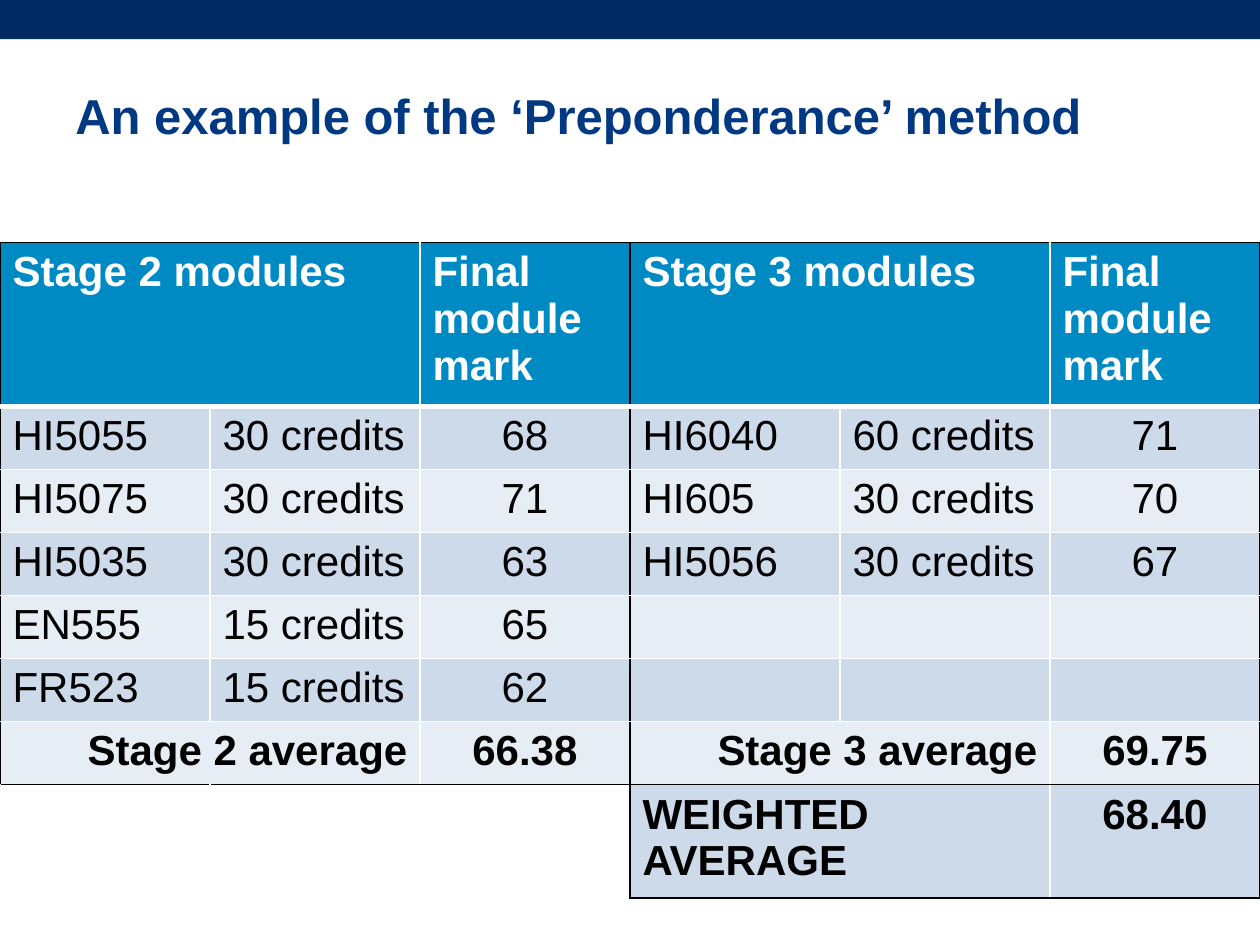
from lxml.etree import SubElement
from pptx import Presentation
from pptx.dml.color import RGBColor
from pptx.enum.shapes import MSO_SHAPE
from pptx.enum.text import MSO_ANCHOR, PP_ALIGN
from pptx.oxml.ns import qn
from pptx.util import Cm, Pt

NAVY = RGBColor(0x00, 0x2A, 0x62)
TITLE_BLUE = RGBColor(0x00, 0x38, 0x82)
HEADER_BLUE = RGBColor(0x00, 0x8A, 0xC4)
BAND_DARK = RGBColor(0xCC, 0xDA, 0xEA)
BAND_LIGHT = RGBColor(0xE7, 0xED, 0xF5)
BLACK = RGBColor(0x00, 0x00, 0x00)
WHITE = RGBColor(0xFF, 0xFF, 0xFF)

ROWS = [
    ["Stage 2 modules", "", "Final module mark", "Stage 3 modules", "", "Final module mark"],
    ["HI5055", "30 credits", "68", "HI6040", "60 credits", "71"],
    ["HI5075", "30 credits", "71", "HI605", "30 credits", "70"],
    ["HI5035", "30 credits", "63", "HI5056", "30 credits", "67"],
    ["EN555", "15 credits", "65", "", "", ""],
    ["FR523", "15 credits", "62", "", "", ""],
    ["Stage 2 average", "", "66.38", "Stage 3 average", "", "69.75"],
    ["", "", "", "WEIGHTED AVERAGE", "", "68.40"],
]
ROW_HEIGHTS = [3.07] + [1.2] * 6 + [2.14]
MERGED = [(0, 0), (0, 3), (6, 0), (6, 3), (7, 3)]
AVERAGE_ROW, WEIGHTED_ROW = 6, 7


def format_run(paragraph, size, color, bold):
    for run in paragraph.runs:
        run.font.name = "Arial"
        run.font.size = Pt(size)
        run.font.bold = bold
        run.font.color.rgb = color


def add_border(cell, side, color, width):
    line = SubElement(cell._tc.get_or_add_tcPr(), qn(f"a:ln{side}"), w=str(Pt(width)))
    fill = SubElement(line, qn("a:solidFill"))
    SubElement(fill, qn("a:srgbClr"), val=str(color))


presentation = Presentation()
presentation.slide_width = Cm(25.4)
presentation.slide_height = Cm(19.05)
slide = presentation.slides.add_slide(presentation.slide_layouts[6])

top_bar = slide.shapes.add_shape(MSO_SHAPE.RECTANGLE, 0, 0, Cm(25.4), Cm(0.79))
top_bar.shadow.inherit = False
top_bar.fill.solid()
top_bar.fill.fore_color.rgb = NAVY
top_bar.line.fill.background()

title = slide.shapes.add_textbox(Cm(1.27), Cm(1.52), Cm(23.04), Cm(1.6))
title.text_frame.word_wrap = True
title.text_frame.vertical_anchor = MSO_ANCHOR.MIDDLE
title.text_frame.text = "An example of the ‘Preponderance’ method"
format_run(title.text_frame.paragraphs[0], 28, TITLE_BLUE, True)

table = slide.shapes.add_table(
    len(ROWS), 6, 0, Cm(4.89), Cm(25.4), Cm(sum(ROW_HEIGHTS))
).table
table.first_row = False
table.horz_banding = False
for row, height in zip(table.rows, ROW_HEIGHTS):
    row.height = Cm(height)
for row, column in MERGED:
    table.cell(row, column).merge(table.cell(row, column + 1))

for row, texts in enumerate(ROWS):
    for column, text in enumerate(texts):
        cell = table.cell(row, column)
        blank = row == WEIGHTED_ROW and column < 3
        left_black = column == 3 or column == 0 and not blank
        top_black = row in (0, WEIGHTED_ROW)
        bottom_black = row >= AVERAGE_ROW and not blank
        add_border(cell, "L", BLACK if left_black else WHITE, 1)
        add_border(cell, "R", BLACK if column in (2, 5) else WHITE, 1)
        add_border(cell, "T", BLACK if top_black else WHITE, 3 if row == 1 else 1)
        add_border(cell, "B", BLACK if bottom_black else WHITE, 3 if row == 0 else 1)

        if blank:
            cell.fill.background()
            continue
        cell.fill.solid()
        band = BAND_DARK if row % 2 else BAND_LIGHT
        cell.fill.fore_color.rgb = HEADER_BLUE if row == 0 else band
        if not text:
            continue
        cell.text_frame.text = text
        paragraph = cell.text_frame.paragraphs[0]
        if row > 0 and column in (2, 5):
            paragraph.alignment = PP_ALIGN.CENTER
        elif row == AVERAGE_ROW:
            paragraph.alignment = PP_ALIGN.RIGHT
        bold = row == 0 or row >= AVERAGE_ROW
        format_run(paragraph, 24, WHITE if row == 0 else BLACK, bold)

presentation.save("out.pptx")
